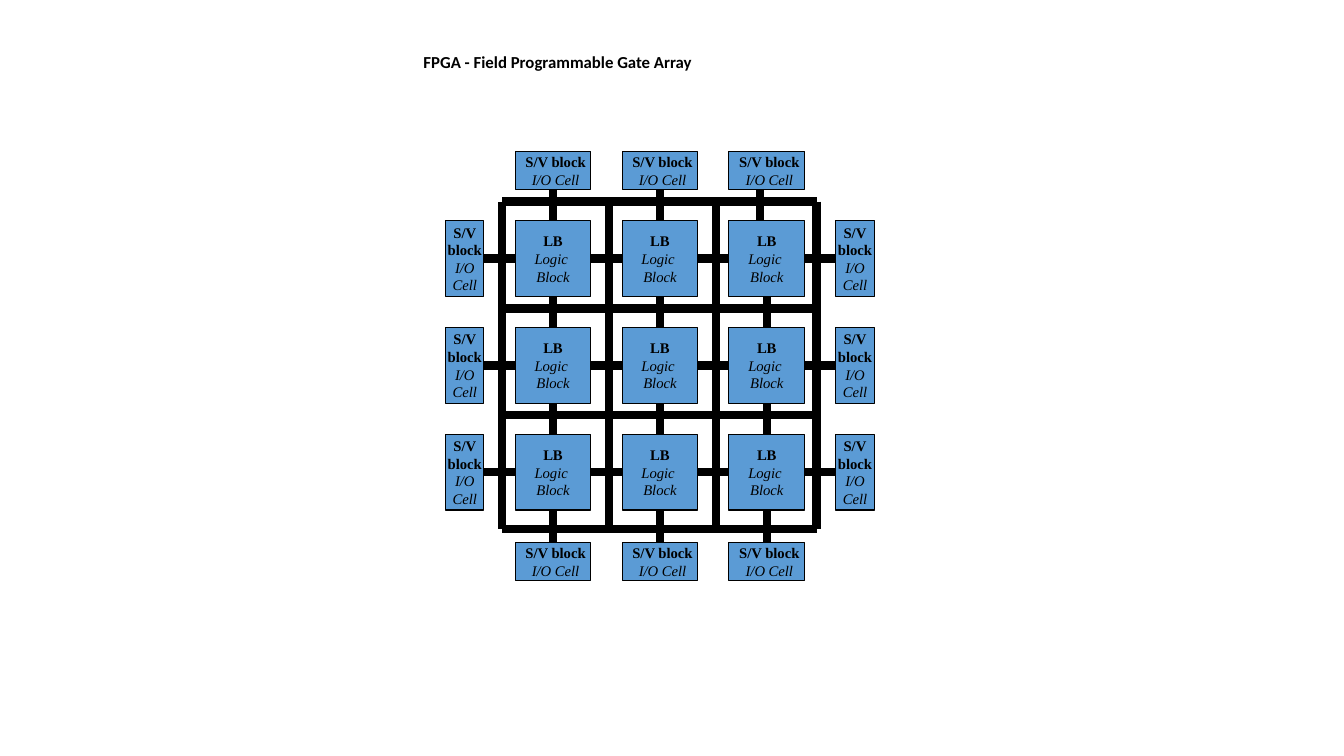
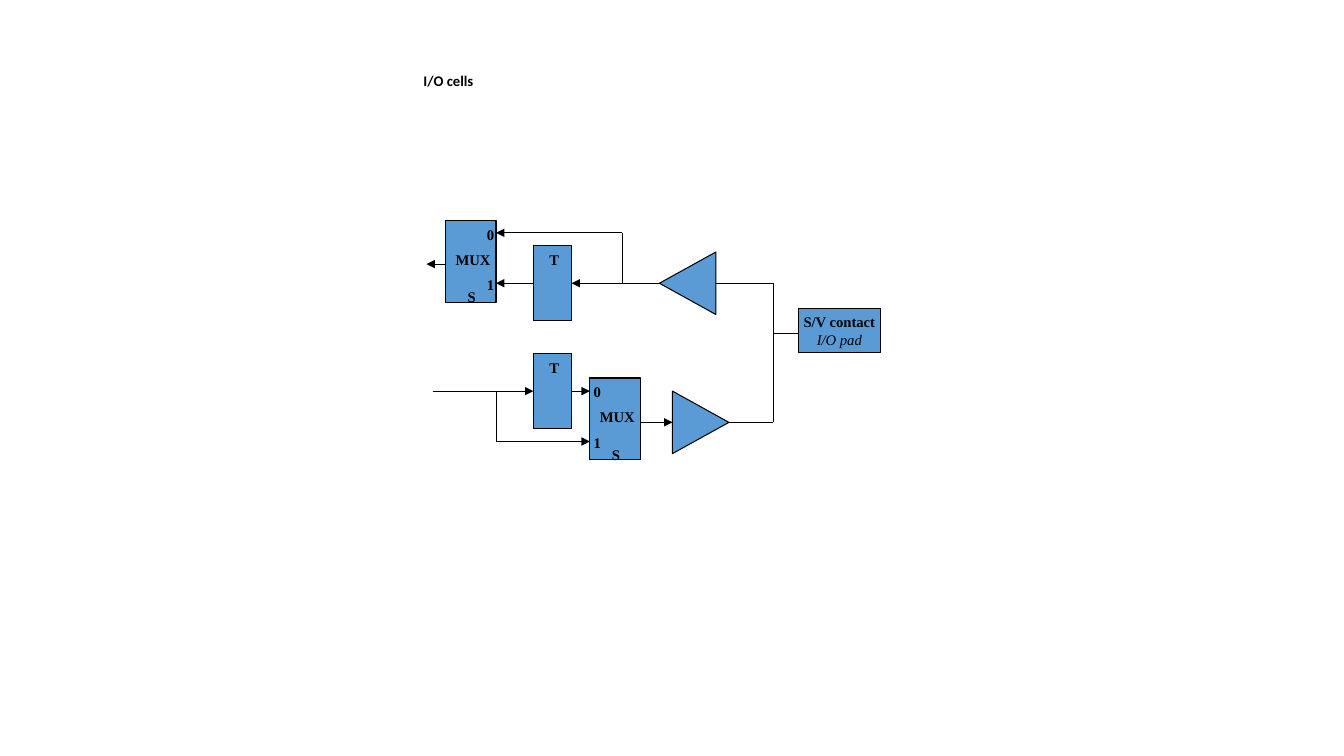
from lxml import etree
from pptx import Presentation
from pptx import util as u
from pptx.dml.color import RGBColor
from pptx.enum import shapes, text
from pptx.oxml.ns import qn

BLUE = RGBColor(0x5B, 0x9B, 0xD5)
BLACK = RGBColor(0x00, 0x00, 0x00)
BODY = {"name": "Times New Roman", "size": u.Pt(10.5)}
BOLD = {**BODY, "bold": True, "italic": False}
ITALIC = {**BODY, "bold": False, "italic": True}
TITLE = {"name": "Calibri", "bold": True}
TOP, LEFT, BOTTOM, RIGHT = range(4)
THIN, THICK = 0.75, 6

PITCH, BLOCK, CELL = 1.06, 0.75, 0.38
COLS = [5.11 + PITCH * i for i in range(3)]
ROWS = [2.19 + PITCH * i for i in range(3)]
BUS_X = (4.98, 6.04, 7.1, 8.1)
BUS_Y = (2, 3.06, 4.12, 5.25)
LOGIC = [("LB", BOLD), ("Logic ", ITALIC), ("Block", ITALIC)]
SIDE_CELL = [("S/V", BOLD), ("block", BOLD), ("I/O", ITALIC), ("Cell", ITALIC)]
WIDE_CELL = [("S/V block", BOLD), ("I/O Cell", ITALIC)]
CONTACT = [("S/V contact", BOLD), ("I/O pad", ITALIC)]


def style(font, fmt):
    for key, value in fmt.items():
        setattr(font, key, value)
    font.color.rgb = BLACK


def add_titled_slide(prs, title, top, size):
    s = prs.slides.add_slide(prs.slide_layouts[5])
    sp = s.shapes.title
    sp.left, sp.top, sp.width, sp.height = map(u.Inches, (4.1, top, 4.78, 1.25))
    tf = sp.text_frame
    tf.vertical_anchor = text.MSO_ANCHOR.MIDDLE
    tf.auto_size = text.MSO_AUTO_SIZE.NONE
    p = tf.paragraphs[0]
    p.alignment = text.PP_ALIGN.LEFT
    p.line_spacing = 0.9
    r = p.add_run()
    r.text = title
    style(r.font, {**TITLE, "size": u.Pt(size)})
    return s


def add_block(s, x, y, w, h, lines=(), kind=shapes.MSO_SHAPE.RECTANGLE, rotation=0):
    sp = s.shapes.add_shape(kind, *map(u.Inches, (x, y, w, h)))
    sp.rotation = rotation
    sp.shadow.inherit = False
    sp.fill.solid()
    sp.fill.fore_color.rgb = BLUE
    sp.line.color.rgb = BLACK
    sp.line.width = u.Pt(THIN)
    tf = sp.text_frame
    tf.word_wrap = False
    tf.vertical_anchor = text.MSO_ANCHOR.MIDDLE
    for i, (words, fmt) in enumerate(lines):
        p = tf.add_paragraph() if i else tf.paragraphs[0]
        p.alignment = text.PP_ALIGN.CENTER
        r = p.add_run()
        r.text = words
        style(r.font, fmt)
    return sp


def add_label(s, words, x, y, w=0.28):
    sp = s.shapes.add_textbox(*map(u.Inches, (x, y, w, 0.28)))
    tf = sp.text_frame
    tf.word_wrap = False
    tf.auto_size = text.MSO_AUTO_SIZE.SHAPE_TO_FIT_TEXT
    r = tf.paragraphs[0].add_run()
    r.text = words
    style(r.font, BOLD)


def is_point(end):
    return isinstance(end[0], (int, float)) 


def add_wire(s, start, end, width=THIN, arrow=False):
    points = [e if is_point(e) else (0, 0) for e in (start, end)]
    c = s.shapes.add_connector(
        shapes.MSO_CONNECTOR.STRAIGHT, *(u.Inches(v) for pt in points for v in pt))
    if not is_point(start):
        c.begin_connect(*start)
    if not is_point(end):
        c.end_connect(*end)
    c.line.color.rgb = BLACK
    c.line.width = u.Pt(width)
    if arrow:
        etree.SubElement(c.line._get_or_add_ln(), qn("a:tailEnd"), type="triangle")
    etree.SubElement(c._element.spPr, qn("a:effectLst"))


def add_chain(s, blocks, side_out, side_in):
    for a, b in zip(blocks, blocks[1:]):
        add_wire(s, (a, side_out), (b, side_in), THICK)


def add_mux(s, x, y, input_x):
    add_block(s, x, y, 0.5, 0.81)
    add_label(s, "S", x + 0.12, y + 0.62)
    add_label(s, "MUX", x, y + 0.25, 0.55)
    add_label(s, "0", input_x, y)
    add_label(s, "1", input_x, y + 0.5)


def add_latch(s, y):
    sp = add_block(s, 5.29, y, CELL, 0.74)
    add_label(s, "T", 5.35, y, 0.3)
    return sp


def build_array(prs):
    s = add_titled_slide(prs, "FPGA - Field Programmable Gate Array", 0, 12)
    logic = [[add_block(s, x, y, BLOCK, BLOCK, LOGIC) for x in COLS] for y in ROWS]
    left, right = [[add_block(s, x, y, CELL, BLOCK, SIDE_CELL) for y in ROWS]
                   for x in (4.42, 8.29)]
    top, bottom = [[add_block(s, x, y, BLOCK, CELL, WIDE_CELL) for x in COLS]
                   for y in (1.5, 5.38)]
    for sp in top + bottom:
        sp.text_frame.margin_left = u.Inches(0.15)

    for y in BUS_Y:
        add_wire(s, (BUS_X[0], y), (BUS_X[-1], y), THICK)
    for x in BUS_X:
        add_wire(s, (x, BUS_Y[0]), (x, BUS_Y[-1]), THICK)
    for first, row, last in zip(left, logic, right):
        add_chain(s, [first, *row, last], RIGHT, LEFT)
    for column in zip(*logic, bottom):
        add_chain(s, column, BOTTOM, TOP)
    add_chain(s, [top[0], logic[0][0]], BOTTOM, TOP)
    add_chain(s, [top[1], logic[0][1]], BOTTOM, TOP)
    add_wire(s, (7.54, 1.88), (7.54, ROWS[0]), THICK)


def build_cells(prs):
    s = add_titled_slide(prs, "I/O cells", 0.19, 10.5)
    latch_in, latch_out = add_latch(s, 2.44), add_latch(s, 3.51)
    for x, y, rotation in ((6.64, 3.91, 270), (6.51, 2.53, 90)):
        add_block(s, x, y, 0.62, 0.56, kind=shapes.MSO_SHAPE.FLOWCHART_MERGE,
                  rotation=rotation)
    add_block(s, 7.92, 3.06, 0.81, 0.44, CONTACT)
    add_mux(s, 4.42, 2.19, 4.73)
    add_mux(s, 5.85, 3.75, 5.79)

    for start, end in (
        ((7.23, 4.19), (7.67, 4.19)),
        ((7.1, 2.81), (7.67, 2.81)),
        ((7.67, 2.81), (7.67, 4.19)),
        ((7.67, 3.31), (7.92, 3.31)),
        ((6.17, 2.31), (6.17, 2.81)),
        ((4.92, 3.88), (4.92, 4.38)),
    ):
        add_wire(s, start, end)
    for start, end in (
        ((6.54, 2.81), (latch_in, RIGHT)),
        ((latch_in, LEFT), (4.92, 2.81)),
        ((6.17, 2.31), (4.92, 2.31)),
        ((4.42, 2.62), (4.23, 2.62)),
        ((4.29, 3.88), (latch_out, LEFT)),
        ((latch_out, RIGHT), (5.85, 3.88)),
        ((4.92, 4.38), (5.85, 4.38)),
        ((6.35, 4.19), (6.67, 4.19)),
    ):
        add_wire(s, start, end, arrow=True)


def main():
    prs = Presentation()
    prs.slide_width, prs.slide_height = u.Inches(13.33), u.Inches(7.5)
    build_array(prs)
    build_cells(prs)
    prs.save("out.pptx")


if __name__ == "__main__":
    main()
